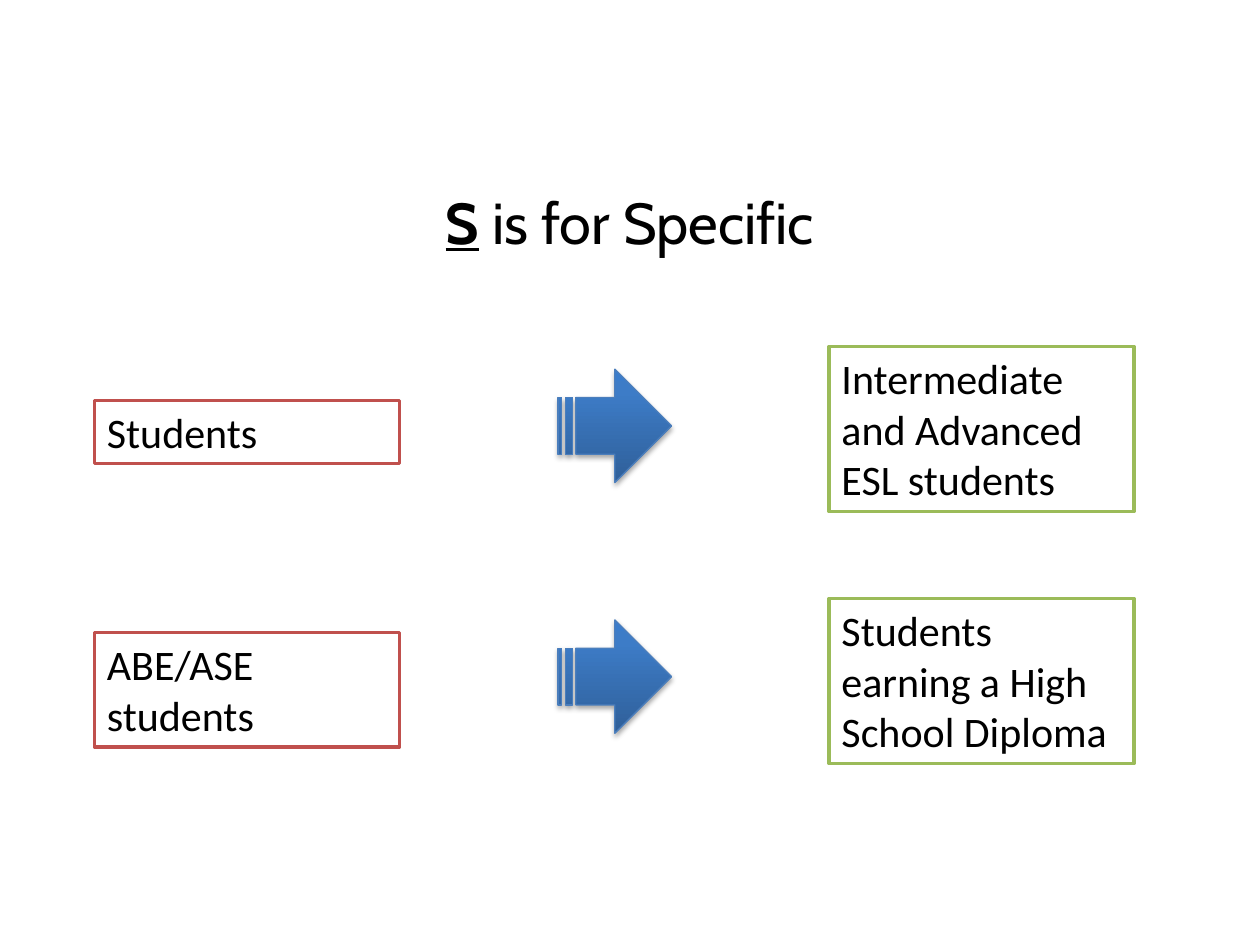
from copy import deepcopy
from typing import NamedTuple

from lxml import etree
from pptx import Presentation
from pptx.dml.color import RGBColor
from pptx.enum.shapes import MSO_SHAPE
from pptx.enum.text import MSO_ANCHOR, MSO_AUTO_SIZE, PP_ALIGN
from pptx.oxml.ns import qn
from pptx.slide import Slide
from pptx.util import Inches, Pt

RECT = MSO_SHAPE.RECTANGLE
ARROW = MSO_SHAPE.STRIPED_RIGHT_ARROW
TOP, MIDDLE = MSO_ANCHOR.TOP, MSO_ANCHOR.MIDDLE
LEFT, CENTER = PP_ALIGN.LEFT, PP_ALIGN.CENTER
GROW, FIXED = MSO_AUTO_SIZE.SHAPE_TO_FIT_TEXT, MSO_AUTO_SIZE.NONE

COLORS = {
    "text": "000000",
    "fill": "FFFFFF",
    "vague": "C0504D",
    "exact": "9BBB59",
    "edge": "4B7EBC",
}
STOPS = ((0, "2F5F99"), (0.8, "3D7CC7"), (1, "3A7CCB"))
VAGUE_X, ARROW_X, EXACT_X = 0.75, 4.43, 6.58
BOX_W, ARROW_SIZE = 2.42, 0.9


class Box(NamedTuple):
    text: str
    top: float
    height: float


class Pair(NamedTuple):
    vague: Box
    arrow_top: float
    exact: Box


PAIRS = (
    Pair(Box("Students", 3.18, 0.5), 2.93,
         Box("Intermediate and Advanced ESL students", 2.75, 1.31)),
    Pair(Box("ABE/ASE students", 5.02, 0.91), 4.92,
         Box("Students earning a High School Diploma", 4.75, 1.31)),
)


def rgb(name: str) -> RGBColor:
    return RGBColor.from_string(COLORS[name])


def add_title(slide: Slide) -> None:
    title = slide.shapes.title
    title.left, title.top = Inches(0.5), Inches(1.17)
    title.width, title.height = Inches(9), Inches(1.17)
    frame = title.text_frame
    frame.auto_size = FIXED
    frame.vertical_anchor = MIDDLE
    line = frame.paragraphs[0]
    line.alignment = CENTER
    line.font.name, line.font.size = "Cabin", Pt(33)
    line.font.color.rgb = rgb("text")
    first = line.add_run()
    first.text = "S"
    first.font.bold = first.font.underline = True
    line.add_run().text = " is for Specific"


def add_box(slide: Slide, box: Box, left: float, color: str) -> None:
    shape = slide.shapes.add_shape(
        RECT, Inches(left), Inches(box.top), Inches(BOX_W), Inches(box.height))
    shape.shadow.inherit = False
    shape.fill.solid()
    shape.fill.fore_color.rgb = rgb("fill")
    shape.line.color.rgb = rgb(color)
    shape.line.width = Pt(2)
    frame = shape.text_frame
    frame.text = box.text
    frame.word_wrap = True
    frame.auto_size = GROW
    frame.vertical_anchor = TOP
    line = frame.paragraphs[0]
    line.alignment = LEFT
    line.font.name, line.font.size = "Calibri", Pt(24)
    line.font.color.rgb = rgb("text")


def add_arrow(slide: Slide, top: float) -> None:
    """Draw a striped arrow with a three-stop gradient and a soft shadow."""
    shape = slide.shapes.add_shape(
        ARROW, Inches(ARROW_X), Inches(top), Inches(ARROW_SIZE), Inches(ARROW_SIZE))
    shape.line.color.rgb = rgb("edge")
    shape.line.width = Pt(0.75)

    shape.fill.gradient()
    shape.fill.gradient_angle = 90
    stops = shape._element.spPr.find(".//" + qn("a:gsLst"))
    stops.append(deepcopy(stops[-1]))
    for stop, (place, color) in zip(shape.fill.gradient_stops, STOPS):
        stop.position = place
        stop.color.rgb = RGBColor.from_string(color)

    shape.shadow.inherit = False
    effects = shape._element.spPr.find(qn("a:effectLst"))
    shadow = etree.SubElement(
        effects, qn("a:outerShdw"), blurRad=str(Pt(3.1)), dist=str(Pt(1.8)),
        dir="5400000", rotWithShape="0")
    tint = etree.SubElement(shadow, qn("a:srgbClr"), val=COLORS["text"])
    etree.SubElement(tint, qn("a:alpha"), val="35000")


def main() -> None:
    deck = Presentation()
    deck.slide_width, deck.slide_height = Inches(10), Inches(7.5)
    slide = deck.slides.add_slide(deck.slide_layouts.get_by_name("Title Only"))
    add_title(slide)
    for pair in PAIRS:
        add_box(slide, pair.vague, VAGUE_X, "vague")
        add_arrow(slide, pair.arrow_top)
        add_box(slide, pair.exact, EXACT_X, "exact")
    deck.save("out.pptx")


if __name__ == "__main__":
    main()
